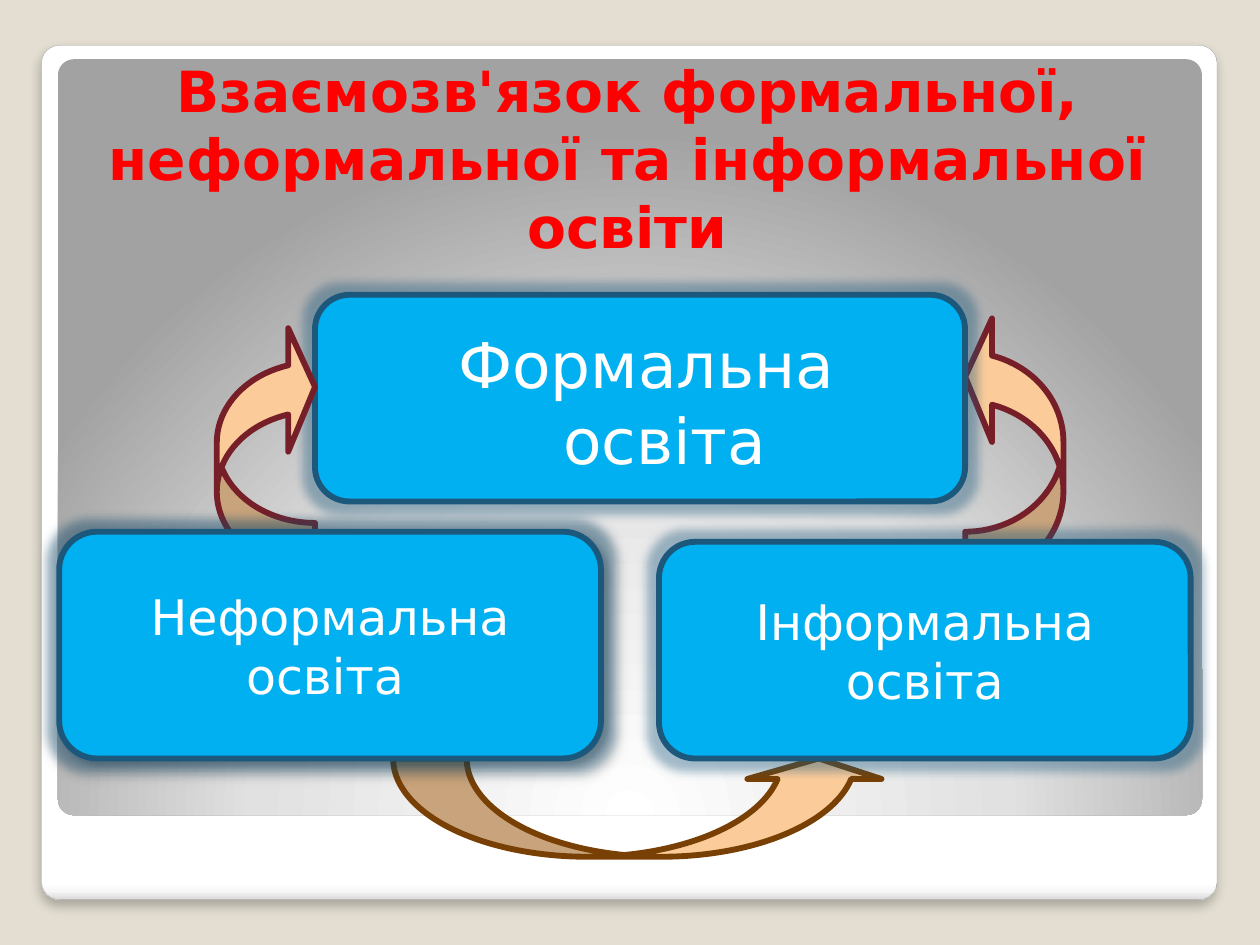
from lxml import etree
from pptx import Presentation
from pptx.dml.color import RGBColor
from pptx.enum.shapes import MSO_SHAPE
from pptx.enum.text import MSO_ANCHOR, MSO_AUTO_SIZE, PP_ALIGN
from pptx.oxml import parse_xml
from pptx.util import Pt

ROUND = MSO_SHAPE.ROUNDED_RECTANGLE
CURVED_RIGHT = MSO_SHAPE.CURVED_RIGHT_ARROW
CURVED_DOWN = MSO_SHAPE.CURVED_DOWN_ARROW
CENTER = PP_ALIGN.CENTER
MIDDLE, BOTTOM = MSO_ANCHOR.MIDDLE, MSO_ANCHOR.BOTTOM
NO_FIT = MSO_AUTO_SIZE.NONE
NS = "http://schemas.openxmlformats.org/drawingml/2006/main"

THEME = {
    "font": "DejaVu Sans",
    "background": "E3DED1", "frame_line": "A4A4A4", "shadow": "000000",
    "title": "FF0000", "text": "FFFFFF",
    "box": "00B0F0", "box_line": "1B587C",
    "arrow": "FBCC9A", "side_line": "771F28", "bottom_line": "784004",
    "title_size": 32.4, "main_size": 36, "box_size": 28, "space_size": 18,
    "line": 3.35, "glow": 11,
}

TITLE = "Взаємозв'язок формальної, неформальної та інформальної освіти"
TITLE_AT = (50.4, 61.92, 616.32, 90)
FORMAL = "Формальна освіта"
FORMAL_AT = (180, 168.48, 371.52, 118.08)
INFORMAL = [("Інформальна освіта", "box_size")]
INFORMAL_AT = (376.56, 309.6, 303.84, 123.84)
NONFORMAL = [("Неформальна", "box_size"), (" ", "space_size"),
             ("освіта", "box_size"), (" ", "space_size")]
NONFORMAL_AT = (33.84, 303.84, 309.6, 129.6)

FRAME_AT = (23.76, 25.92, 671.76, 488.16)
FRAME_STOPS = [(0, "FFFFFF"), (98, "FFFFFF"), (99, "F7F7F7"), (100, "DADADA")]
PANEL_AT = (33.12, 33.84, 653.76, 432)
PANEL_STOPS = [(0, "FFFFFF"), (55, "E1E1E1"), (100, "A2A2A2")]
PANEL_ROUNDING = [0.021]

SIDE_ADJ = [0.5, 1.257, 0.273]
BOTTOM_ADJ = [0.749, 1.365, 0.208]
RIGHT_ARROW_AT = (551.52, 180, 56.16, 151.92)
LEFT_ARROW_AT = (123.84, 185.76, 56.16, 141.12)
BOTTOM_ARROW_AT = (224.64, 433.44, 281.52, 56.16)


def color(name):
    return RGBColor.from_string(THEME[name])


def place(sp, at):
    sp.left, sp.top, sp.width, sp.height = map(Pt, at)


def add_shape(s, kind, at, adj=()):
    sp = s.shapes.add_shape(kind, *map(Pt, at))
    sp.shadow.inherit = False
    for i, value in enumerate(adj):
        sp.adjustments[i] = value
    return sp


def paint(sp, fill, line):
    sp.fill.solid()
    sp.fill.fore_color.rgb = color(fill)
    sp.line.color.rgb = color(line)
    sp.line.width = Pt(THEME["line"])


def set_gradient(sp, stops, direction):
    sp.fill.background()
    old = sp.element.spPr.find(f"{{{NS}}}noFill")
    gs = "".join(f'<a:gs pos="{pos * 1000}"><a:srgbClr val="{rgb}"/></a:gs>'
                 for pos, rgb in stops)
    old.getparent().replace(old, parse_xml(
        f'<a:gradFill xmlns:a="{NS}" rotWithShape="1">'
        f"<a:gsLst>{gs}</a:gsLst>{direction}</a:gradFill>"))


def add_effect(sp, tag, rgb, alpha, **attrs):
    effects = sp.element.spPr.find(f"{{{NS}}}effectLst")
    effect = etree.SubElement(effects, f"{{{NS}}}{tag}",
                              {k: str(int(v)) for k, v in attrs.items()})
    clr = etree.SubElement(effect, f"{{{NS}}}srgbClr", val=rgb)
    etree.SubElement(clr, f"{{{NS}}}alpha", val=str(alpha * 1000))


def add_shadow(sp, alpha, blur, dist, angle):
    add_effect(sp, "outerShdw", THEME["shadow"], alpha,
               blurRad=Pt(blur), dist=Pt(dist), dir=angle * 60000)


def style_box(sp):
    paint(sp, "box", "box_line")
    add_effect(sp, "glow", THEME["box_line"], 40, rad=Pt(THEME["glow"]))


def write(sp, runs, text_color, anchor, bold=False):
    tf = sp.text_frame
    tf.word_wrap = True
    tf.auto_size = NO_FIT
    tf.vertical_anchor = anchor
    p = tf.paragraphs[0]
    p.alignment = CENTER
    for text, size in runs:
        r = p.add_run()
        r.text = text
        r.font.name = THEME["font"]
        r.font.size = Pt(THEME[size])
        r.font.bold = bold
        r.font.color.rgb = color(text_color)
    return p


def add_arrow(s, kind, at, adj, line, rotation=0, flip=None):
    sp = add_shape(s, kind, at, adj)
    paint(sp, "arrow", line)
    sp.rotation = rotation
    if flip:
        sp.element.spPr.xfrm.set(flip, "1")


def add_box(s, at, runs):
    sp = add_shape(s, ROUND, at)
    style_box(sp)
    write(sp, runs, "text", MIDDLE)
    return sp


def bring_to_front(s, sp):
    s.shapes.element.append(sp.element)


def add_backdrop(s):
    s.background.fill.solid()
    s.background.fill.fore_color.rgb = color("background")
    frame = add_shape(s, ROUND, FRAME_AT, PANEL_ROUNDING)
    set_gradient(frame, FRAME_STOPS, '<a:lin ang="5400000" scaled="0"/>')
    frame.line.color.rgb = color("frame_line")
    frame.line.width = Pt(0.16)
    add_shadow(frame, 25, 6, 4, 90)
    panel = add_shape(s, ROUND, PANEL_AT, PANEL_ROUNDING)
    set_gradient(panel, PANEL_STOPS,
                 '<a:path path="circle"><a:fillToRect l="50000" t="175000" '
                 'r="50000" b="-75000"/></a:path>')
    panel.line.fill.background()


def add_title(s):
    sp = s.shapes.title
    bring_to_front(s, sp)
    place(sp, TITLE_AT)
    write(sp, [(TITLE, "title_size")], "title", BOTTOM, bold=True)


def add_formal(s):
    sp = s.placeholders[1]
    bring_to_front(s, sp)
    place(sp, FORMAL_AT)
    sp.element.spPr.xfrm.addnext(parse_xml(
        f'<a:prstGeom xmlns:a="{NS}" prst="roundRect"><a:avLst/></a:prstGeom>'))
    sp.shadow.inherit = False
    style_box(sp)
    p = write(sp, [(FORMAL, "main_size")], "text", MIDDLE)
    p.space_before = Pt(2.5)
    pPr = p._p.get_or_add_pPr()
    pPr.set("marL", str(Pt(21)))
    pPr.set("indent", str(-Pt(21)))
    etree.SubElement(pPr, f"{{{NS}}}buNone")
    tf = sp.text_frame
    tf.margin_left, tf.margin_top = Pt(14.4), Pt(7.2)
    tf.margin_right, tf.margin_bottom = Pt(7.2), Pt(3.6)


def main():
    prs = Presentation()
    prs.slide_width, prs.slide_height = Pt(720), Pt(540)
    s = prs.slides.add_slide(prs.slide_layouts[1])
    add_backdrop(s)
    add_title(s)
    add_arrow(s, CURVED_RIGHT, RIGHT_ARROW_AT, SIDE_ADJ, "side_line", 180)
    add_arrow(s, CURVED_DOWN, BOTTOM_ARROW_AT, BOTTOM_ADJ, "bottom_line",
              flip="flipV")
    add_box(s, INFORMAL_AT, INFORMAL)
    add_formal(s)
    add_arrow(s, CURVED_RIGHT, LEFT_ARROW_AT, SIDE_ADJ, "side_line", 180, "flipH")
    nonformal = add_box(s, NONFORMAL_AT, NONFORMAL)
    add_shadow(nonformal, 40, 4, 3, 45)
    prs.save("out.pptx")


if __name__ == "__main__":
    main()
